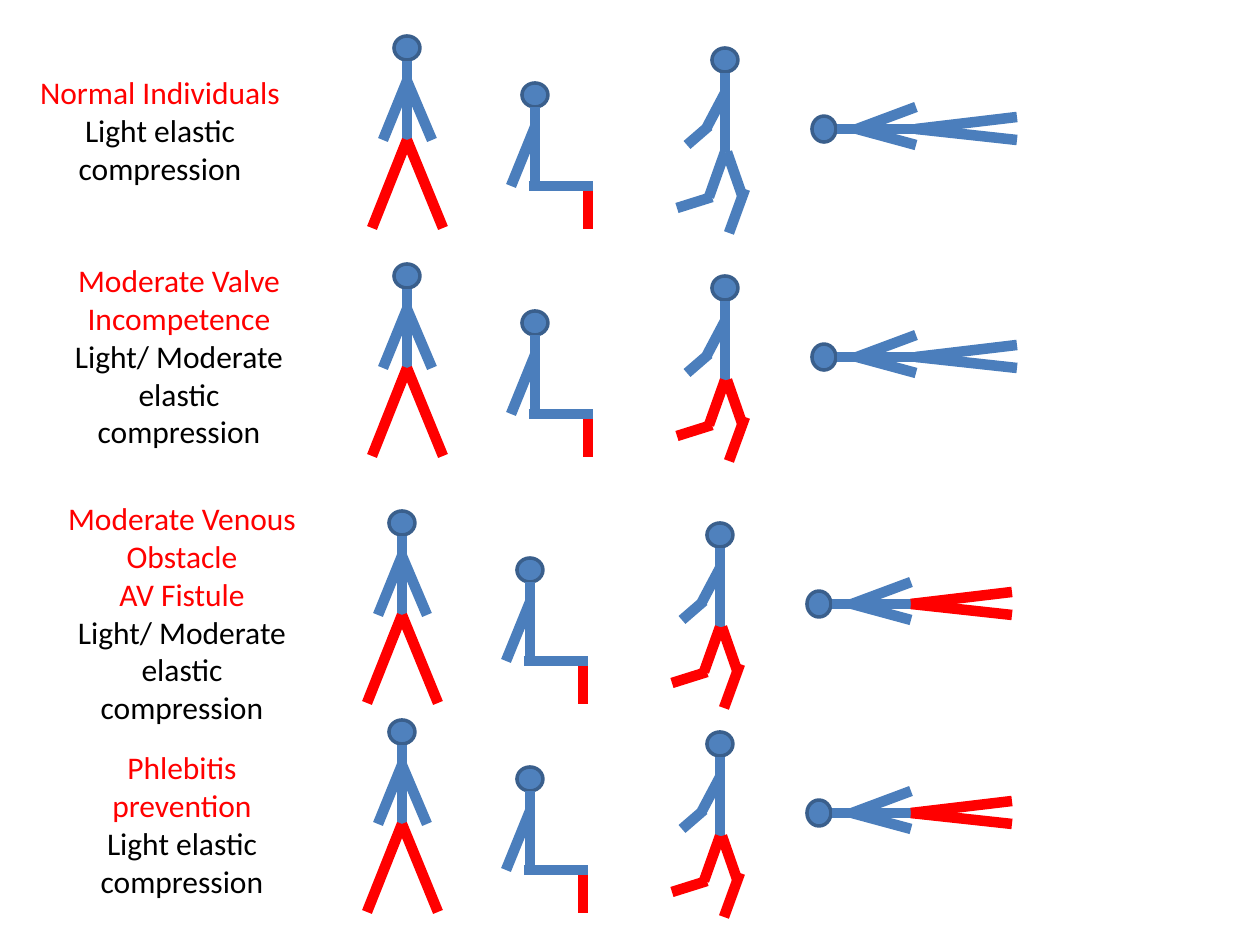
import lxml.etree
import pptx
import pptx.dml.color
import pptx.enum.shapes
import pptx.enum.text
import pptx.oxml.ns
import pptx.util

COLORS = {"body": "4B7EBC", "head": "4F81BD", "outline": "3A5F8C",
          "compressed": "FF0000", "text": "000000"}

# Positions in px from the centre of the standing figure's head.
# Each limb is (x1, y1, x2, y2, is it a leg that may be compressed).
POSES = {
    "standing": {"head": (0, 0), "turn": 0, "limbs": [
        (0, 13, 0, 92, False), (0, 92, -35, 180, True), (0, 92, 36, 180, True),
        (0, 33, -24, 92, False), (0, 33, 25, 92, False)]},
    "sitting": {"head": (128, 47), "turn": 0, "limbs": [
        (128, 59, 128, 138, False), (181, 138, 181, 181, True),
        (122, 138, 186, 138, False), (128, 79, 104, 138, False)]},
    "running": {"head": (318, 12), "turn": 0, "limbs": [
        (318, 25, 318, 104, False), (318, 104, 302, 149, True),
        (270, 160, 305, 149, True), (318, 45, 300, 79, False),
        (280, 97, 302, 78, False), (320, 104, 335, 147, True),
        (338, 141, 322, 185, True)]},
    "lying": {"head": (417, 81), "turn": 270, "limbs": [
        (430, 81, 509, 81, False), (509, 81, 610, 92, True),
        (509, 81, 610, 69, True), (450, 81, 509, 97, False),
        (450, 81, 509, 59, False)]},
}

# Label box, head centre, compressed poses, condition lines, treatment.
ROWS = [
    ((25, 67, 270, 165), (407, 48), {"standing", "sitting"},
     ["Normal Individuals"], "Light elastic compression"),
    ((44, 255, 270, 242), (407, 276), {"standing", "sitting", "running"},
     ["Moderate Valve Incompetence"], "Light/ Moderate elastic compression"),
    ((47, 493, 270, 280), (402, 523), set(POSES),
     ["Moderate Venous Obstacle", "AV Fistule"],
     "Light/ Moderate elastic compression"),
    ((47, 742, 270, 204), (402, 732), set(POSES),
     ["Phlebitis prevention"], "Light elastic compression"),
]


def px(length):
    return pptx.util.Emu(round(length * 914400 / 126))


def rgb(name):
    return pptx.dml.color.RGBColor.from_string(COLORS[name])


def write_text(para, text, *, color="text", size=18, font="Calibri"):
    span = para.add_run()
    span.text = text
    span.font.name = font
    span.font.size = pptx.util.Pt(size)
    span.font.color.rgb = rgb(color)


class Painter:
    head_size = (26, 24)
    limb_width = 6
    outline_width = 2

    def __init__(self, page):
        self.shapes = page.shapes

    def label(self, area, lines):
        """Add a centred text box; lines holds (text, color) pairs."""
        box = self.shapes.add_textbox(*map(px, area))
        frame = box.text_frame
        frame.word_wrap = True
        frame.auto_size = pptx.enum.text.MSO_AUTO_SIZE.SHAPE_TO_FIT_TEXT
        for index, (text, color) in enumerate(lines):
            para = frame.add_paragraph() if index else frame.paragraphs[0]
            para.alignment = pptx.enum.text.PP_ALIGN.CENTER
            write_text(para, text, color=color)

    def head(self, x, y, turn):
        width, height = self.head_size
        shape = self.shapes.add_shape(
            pptx.enum.shapes.MSO_SHAPE.OVAL,
            px(x - width / 2), px(y - height / 2), px(width), px(height))
        shape.rotation = turn
        shape.shadow.inherit = False
        shape.fill.solid()
        shape.fill.fore_color.rgb = rgb("head")
        shape.line.color.rgb = rgb("outline")
        shape.line.width = pptx.util.Pt(self.outline_width)

    def limb(self, x1, y1, x2, y2, color):
        line = self.shapes.add_connector(
            pptx.enum.shapes.MSO_CONNECTOR.STRAIGHT, px(x1), px(y1), px(x2), px(y2))
        line.line.color.rgb = rgb(color)
        line.line.width = pptx.util.Pt(self.limb_width)
        lxml.etree.SubElement(line._element.spPr, pptx.oxml.ns.qn("a:effectLst"))

    def figure(self, x, y, pose, compressed):
        head_x, head_y = pose["head"]
        self.head(x + head_x, y + head_y, pose["turn"])
        for x1, y1, x2, y2, leg in pose["limbs"]:
            color = "compressed" if leg and compressed else "body"
            self.limb(x + x1, y + y1, x + x2, y + y2, color)


def main():
    deck = pptx.Presentation()
    deck.slide_width, deck.slide_height = px(1260), px(945)
    painter = Painter(deck.slides.add_slide(deck.slide_layouts[6]))
    for area, (x, y), compressed, conditions, treatment in ROWS:
        lines = [(text, "compressed") for text in conditions]
        painter.label(area, lines + [(treatment, "text")])
        for name, pose in POSES.items():
            painter.figure(x, y, pose, name in compressed)
    deck.save("out.pptx")


if __name__ == "__main__":
    main()
